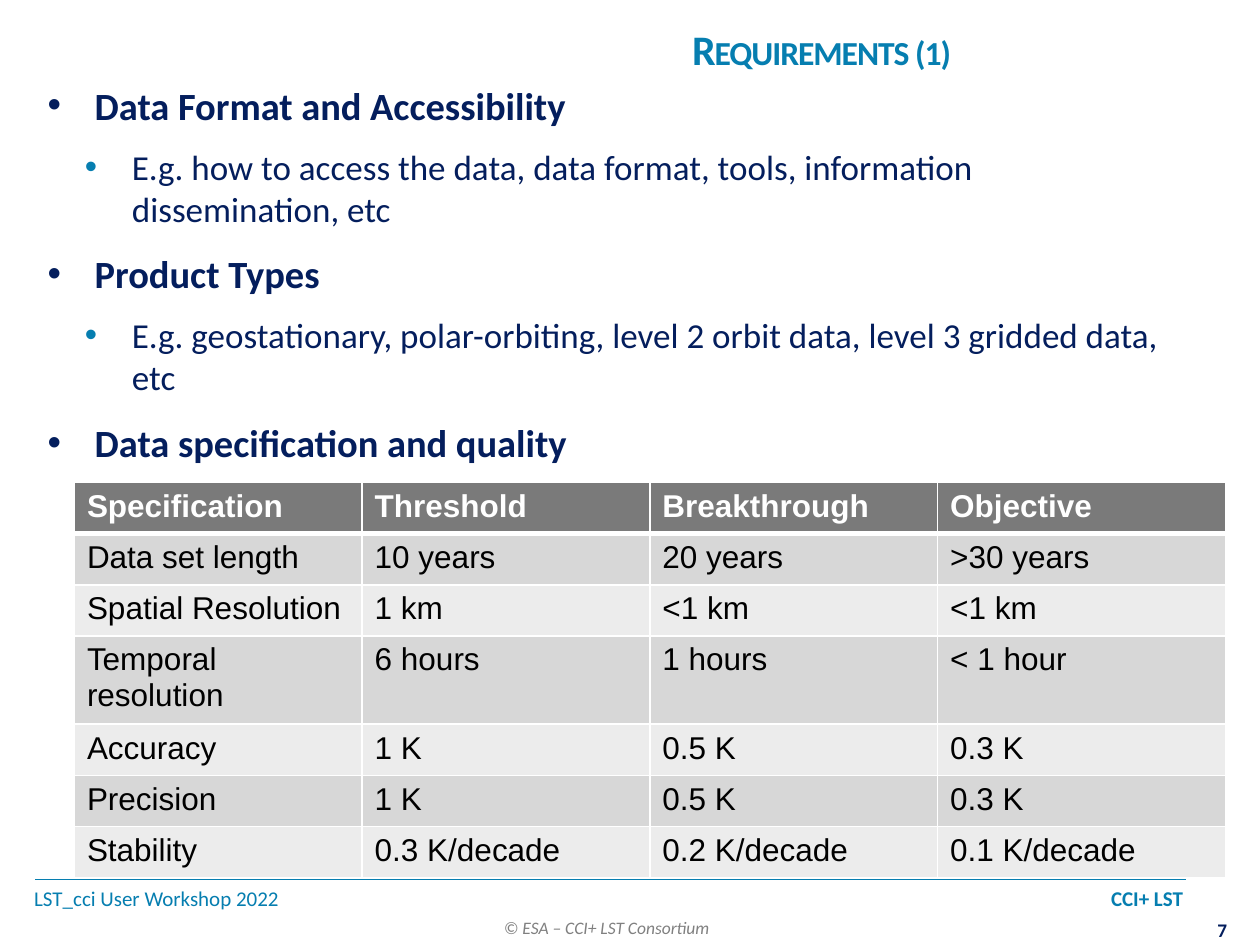
from lxml.etree import SubElement as Sub
from pptx import Presentation
from pptx.dml.color import RGBColor as Rgb
from pptx.enum.shapes import MSO_CONNECTOR as Link
from pptx.enum.text import MSO_ANCHOR as Anchor, PP_ALIGN as Align
from pptx.oxml.ns import qn
from pptx.util import Cm, Pt

HUES = {"blue": "067EB0", "navy": "041E5D", "gray": "808080",
        "white": "FFFFFF", "black": "000000",
        "head": "7A7A7A", "odd": "D7D7D7", "even": "ECECEC"}

TOPICS = [
    ("Data Format and Accessibility",
     "E.g. how to access the data, data format, tools, information "
     "dissemination, etc"),
    ("Product Types",
     "E.g. geostationary, polar-orbiting, level 2 orbit data, "
     "level 3 gridded data, etc"),
    ("Data specification and quality", None),
]

SPECS = [
    ("Specification", "Threshold", "Breakthrough", "Objective"),
    ("Data set length", "10 years", "20 years", ">30 years"),
    ("Spatial Resolution", "1 km", "<1 km", "<1 km"),
    ("Temporal resolution", "6 hours", "1 hours", "< 1 hour"),
    ("Accuracy", "1 K", "0.5 K", "0.3 K"),
    ("Precision", "1 K", "0.5 K", "0.3 K"),
    ("Stability", "0.3 K/decade", "0.2 K/decade", "0.1 K/decade"),
]


def style(font, size, hue, bold=False, name="Calibri"):
    """Set the face, size, weight and colour of a font."""
    font.name, font.size, font.bold = name, Pt(size), bold
    font.color.rgb = Rgb.from_string(HUES[hue])


def add_text(slide, box, text="", pad=None, wrap=True):
    """Add a text box and return its frame."""
    frame = slide.shapes.add_textbox(*map(Cm, box)).text_frame
    frame.word_wrap = wrap
    if pad:
        frame.margin_left = frame.margin_right = Cm(pad[0])
        frame.margin_top = frame.margin_bottom = Cm(pad[1])
    frame.text = text
    return frame


def add_title(slide, box):
    """Place the title in spaced small capitals."""
    frame = add_text(slide, box, "Requirements (1)")
    frame.vertical_anchor = Anchor.MIDDLE
    para = frame.paragraphs[0]
    para.alignment = Align.CENTER
    run = para.runs[0]
    style(run.font, 24, "blue", True)
    props = run.font._element
    props.set("cap", "small")
    props.set("spc", "-60")


def add_bullet(para, text, level):
    """Fill one paragraph as a topic (0) or an example (1)."""
    para.text = text
    para.level = level
    props = para._p.get_or_add_pPr()
    props.set("marL", str(Cm((0.95, 1.7)[level])))
    props.set("indent", str(Cm(-0.95)))
    tint = Sub(props, qn("a:buClr"))
    Sub(tint, qn("a:srgbClr"), val=HUES[("navy", "blue")[level]])
    Sub(props, qn("a:buFont"), typeface="Arial")
    Sub(props, qn("a:buChar"), char="•")
    para.space_before = Pt((12, 4)[level])
    para.space_after = Pt((6, 0)[level])
    style(para.runs[0].font, (22, 20)[level], "navy", level == 0)


def add_body(slide, box):
    """Place the topics with their examples."""
    frame = add_text(slide, box)
    lines = [(text, level) for topic in TOPICS
             for level, text in enumerate(topic) if text]
    for i, (text, level) in enumerate(lines):
        para = frame.add_paragraph() if i else frame.paragraphs[0]
        add_bullet(para, text, level)
    frame.paragraphs[0].space_before = Pt(0)


def add_edges(cell, row):
    """Draw white cell borders, thick below the header row."""
    props = cell._tc.get_or_add_tcPr()
    thick = {0: "lnB", 1: "lnT"}.get(row)
    for side in ("lnL", "lnR", "lnT", "lnB"):
        width = Pt(3 if side == thick else 1)
        line = Sub(props, qn("a:" + side), w=str(width))
        fill = Sub(line, qn("a:solidFill"))
        Sub(fill, qn("a:srgbClr"), val=HUES["white"])


def add_specs(slide, box):
    """Place the specification table on an even grid."""
    rows, cols = len(SPECS), len(SPECS[0])
    table = slide.shapes.add_table(rows, cols, *map(Cm, box)).table
    for col in table.columns:
        col.width = Cm(box[2] / cols)
    for r, texts in enumerate(SPECS):
        table.rows[r].height = Cm(box[3] / rows)
        fill = ("odd" if r % 2 else "even") if r else "head"
        for c, text in enumerate(texts):
            cell = table.cell(r, c)
            cell.text = text
            add_edges(cell, r)
            cell.fill.solid()
            cell.fill.fore_color.rgb = Rgb.from_string(HUES[fill])
            font = cell.text_frame.paragraphs[0].runs[0].font
            style(font, 18, "black" if r else "white", r == 0, "Arial")


def add_footer(slide, box):
    """Place the rule, event line, copyright line and page number."""
    left, top, width, _ = box
    rule = slide.shapes.add_connector(
        Link.STRAIGHT, Cm(left), Cm(top), Cm(left + width), Cm(top))
    rule.line.color.rgb = Rgb.from_string(HUES["blue"])
    rule.line.width = Pt(1)
    Sub(rule._element.spPr, qn("a:effectLst"))

    event = add_text(slide, (left - 0.02, top, width, 0.76), pad=(0, 0.13))
    para = event.paragraphs[0]
    tabs = Sub(para._p.get_or_add_pPr(), qn("a:tabLst"))
    Sub(tabs, qn("a:tab"), pos=str(Cm(23.16)), algn="r")
    for text, bold in (("LST_cci User Workshop 2022\t", False),
                       ("CCI+ LST", True)):
        run = para.add_run()
        run.text = text
        style(run.font, 12, "blue", bold)

    note = add_text(slide, (left + 9.2, top + 0.63, 4.72, 0.69),
                    "© ESA – CCI+ LST Consortium", wrap=False)
    font = note.paragraphs[0].runs[0].font
    style(font, 10, "gray")
    font.italic = True

    page = add_text(slide, (left + 23.6, top + 0.79, 0.66, 0.48),
                    "7", (0, 0), False)
    page.paragraphs[0].alignment = Align.CENTER
    style(page.paragraphs[0].runs[0].font, 11, "navy", True)


def main():
    """Build the slide and save it."""
    deck = Presentation()
    deck.slide_width, deck.slide_height = Cm(25.4), Cm(19.05)
    slide = deck.slides.add_slide(deck.slide_layouts[6])
    add_footer(slide, (0.71, 17.73, 23.19, 1.32))
    add_title(slide, (8.89, 0.13, 15.01, 1.7))
    add_body(slide, (0.71, 1.52, 23.19, 14.5))
    add_specs(slide, (1.5, 9.73, 23.2, 7.21))
    deck.save("out.pptx")


if __name__ == "__main__":
    main()
